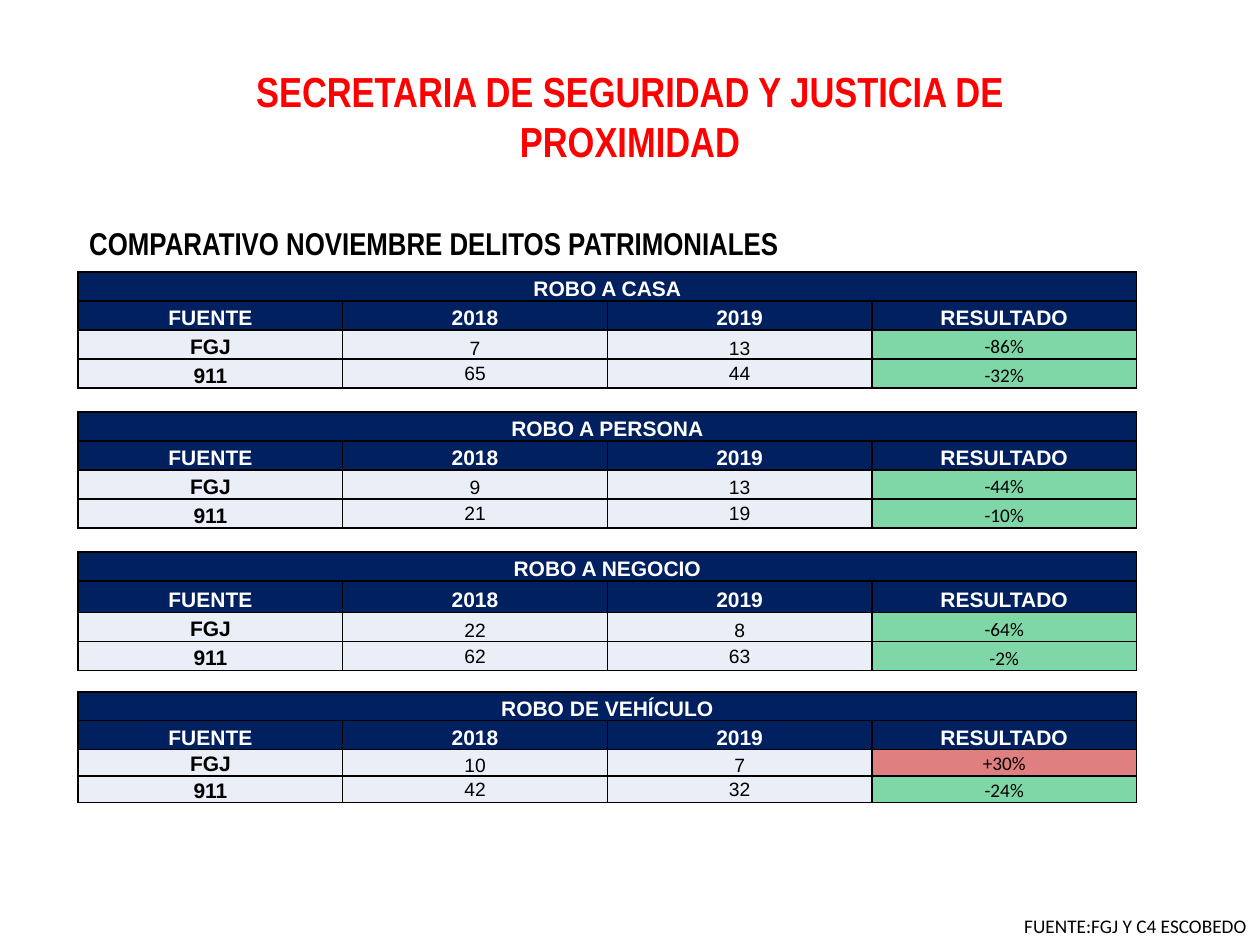
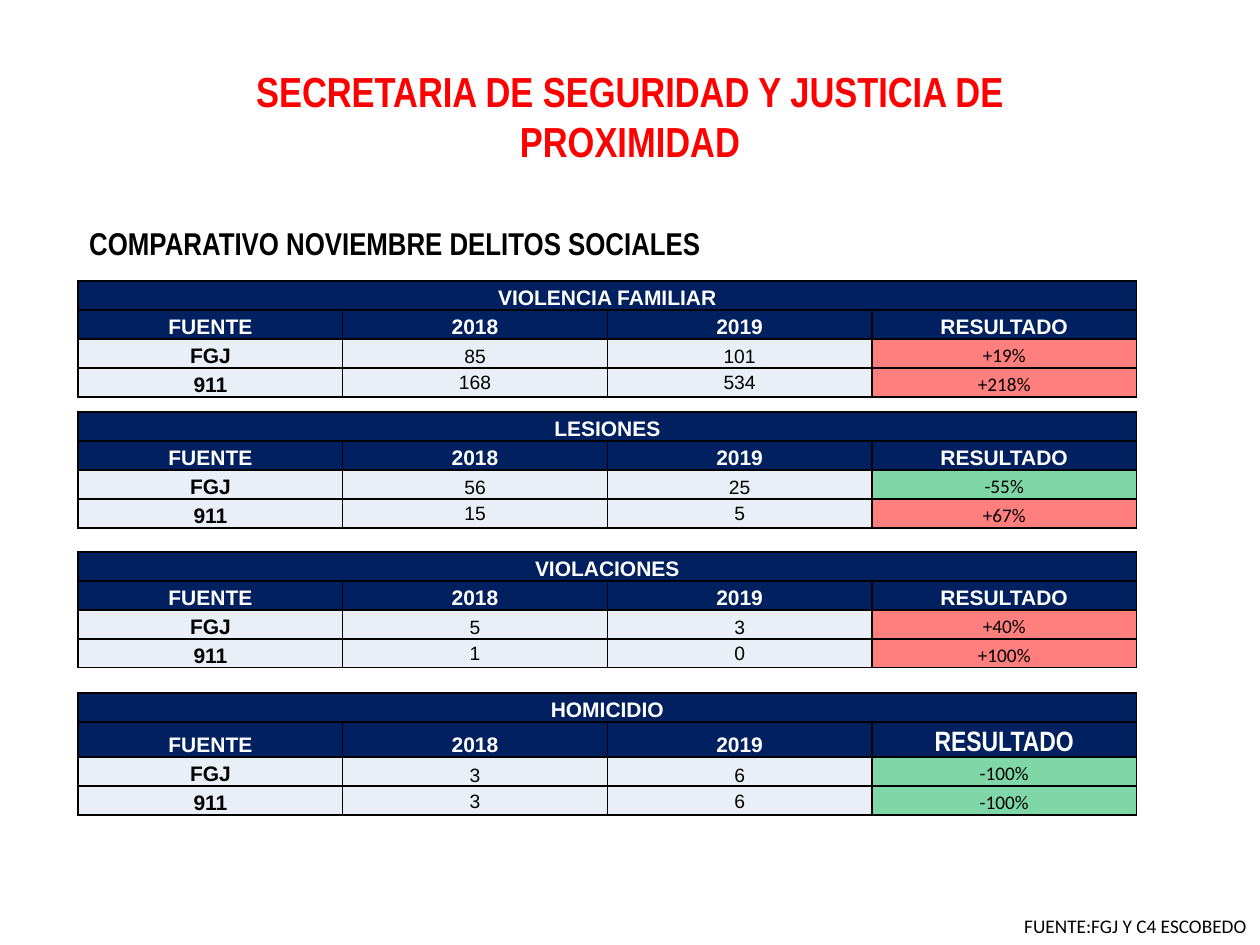
from dataclasses import dataclass

from lxml import etree
from pptx import Presentation
from pptx.dml.color import RGBColor
from pptx.enum.text import MSO_ANCHOR, MSO_AUTO_SIZE, PP_ALIGN
from pptx.oxml.ns import qn
from pptx.util import Inches, Pt

LEFT, CENTER = PP_ALIGN.LEFT, PP_ALIGN.CENTER
BOTTOM, MIDDLE = MSO_ANCHOR.BOTTOM, MSO_ANCHOR.MIDDLE
FIT_SHAPE = MSO_AUTO_SIZE.SHAPE_TO_FIT_TEXT
BLANK_LAYOUT = 6


@dataclass(frozen=True)
class Theme:
    red: str = "FF0000"
    dark_red: str = "C00000"
    green: str = "00B050"
    navy: str = "002060"
    pale: str = "EAEFF7"
    black: str = "000000"
    white: str = "FFFFFF"
    heading_font: str = "Arial Narrow"
    table_font: str = "Arial"
    result_font: str = "Calibri"
    title_size: int = 24
    subtitle_size: int = 18
    large_label_size: int = 16
    label_size: int = 12
    value_size: int = 11
    border_width: float = 1
    result_alpha: int = 50


THEME = Theme()
TITLE = "SECRETARIA DE SEGURIDAD Y JUSTICIA DE PROXIMIDAD"
SOURCE_NOTE = "FUENTE:FGJ Y C4 ESCOBEDO"
HEADINGS = ("FUENTE", "2018", "2019", "RESULTADO")
SOURCES = ("FGJ", "911")

TABLE_LEFT, FIRST_TOP, TABLE_PITCH = 0.62, 2.16, 1.11
COLUMN_WIDTH = 2.1
ROW_HEIGHTS = (0.23, 0.23, 0.23, 0.23)


@dataclass(frozen=True)
class Crime:
    name: str
    fgj: tuple
    calls_911: tuple
    row_heights: tuple = ROW_HEIGHTS
    top_shift: float = 0
    large_result_label: bool = False


PROPERTY_CRIMES = (
    Crime("ROBO A CASA", ("7", "13", "-86%"), ("65", "44", "-32%")),
    Crime("ROBO A PERSONA", ("9", "13", "-44%"), ("21", "19", "-10%")),
    Crime("ROBO A NEGOCIO", ("22", "8", "-64%"), ("62", "63", "-2%"),
          row_heights=(0.23, 0.25, 0.23, 0.23)),
    Crime("ROBO DE VEHÍCULO", ("10", "7", "+30%"), ("42", "32", "-24%"),
          row_heights=(0.23, 0.23, 0.21, 0.21)),
)
SOCIAL_CRIMES = (
    Crime("VIOLENCIA FAMILIAR", ("85", "101", "+19%"), ("168", "534", "+218%"),
          top_shift=0.07),
    Crime("LESIONES", ("56", "25", "-55%"), ("15", "5", "+67%")),
    Crime("VIOLACIONES", ("5", "3", "+40%"), ("1", "0", "+100%")),
    Crime("HOMICIDIO", ("3", "6", "-100%"), ("3", "6", "-100%"),
          row_heights=(0.23, 0.28, 0.23, 0.23), top_shift=0.01,
          large_result_label=True),
)


def write(frame, text, *, font, size, color=THEME.black, bold=False, align=LEFT):
    paragraph = frame.paragraphs[0]
    paragraph.alignment = align
    run = paragraph.add_run()
    run.text = text
    run.font.name = font
    run.font.size = Pt(size)
    run.font.bold = bold
    run.font.color.rgb = RGBColor.from_string(color)


def fill_cell(cell, color, alpha=100):
    """Fill the cell; alpha is its opacity in percent."""
    cell.fill.solid()
    cell.fill.fore_color.rgb = RGBColor.from_string(color)
    if alpha < 100:
        fill_color = cell._tc.tcPr.find(".//" + qn("a:srgbClr"))
        etree.SubElement(fill_color, qn("a:alpha"), val=str(alpha * 1000))


def border_cell(cell, color, width):
    """Line all four sides; the lines must come before the fill in the XML."""
    properties = cell._tc.get_or_add_tcPr()
    for position, side in enumerate(("lnL", "lnR", "lnT", "lnB")):
        line = etree.Element(qn("a:" + side), w=str(Pt(width)))
        solid = etree.SubElement(line, qn("a:solidFill"))
        etree.SubElement(solid, qn("a:srgbClr"), val=color)
        properties.insert(position, line)


class Deck:
    def __init__(self, theme):
        self.theme = theme
        self.presentation = Presentation()
        self.presentation.slide_width = Inches(10)
        self.presentation.slide_height = Inches(7.5)
        self.slide = None

    def text(self, box, text, *, wrap=True, **text_format):
        frame = self.slide.shapes.add_textbox(*map(Inches, box)).text_frame
        frame.word_wrap = wrap
        frame.auto_size = FIT_SHAPE
        write(frame, text, **text_format)

    def start_slide(self, subtitle):
        """Add a slide with the shared title and source note."""
        theme = self.theme
        layout = self.presentation.slide_layouts[BLANK_LAYOUT]
        self.slide = self.presentation.slides.add_slide(layout)
        self.text((1.9, 0.47, 6.2, 0.91), TITLE, font=theme.heading_font,
                  size=theme.title_size, color=theme.red, bold=True, align=CENTER)
        self.text((0.61, 1.73, 7.38, 0.4), subtitle, font=theme.heading_font,
                  size=theme.subtitle_size, bold=True)
        self.text((8.03, 7.21, 1.98, 0.29), SOURCE_NOTE, wrap=False,
                  font=theme.result_font, size=theme.value_size)

    def cell(self, cell, text, fill, *, alpha=100, anchor=BOTTOM, **text_format):
        cell.margin_left = cell.margin_right = cell.margin_top = Inches(0.01)
        cell.margin_bottom = 0
        cell.vertical_anchor = anchor
        fill_cell(cell, fill, alpha)
        border_cell(cell, self.theme.black, self.theme.border_width)
        write(cell.text_frame, text, align=CENTER, **text_format)

    def crime_table(self, crime, top, increase_color):
        theme = self.theme
        width = COLUMN_WIDTH * len(HEADINGS)
        table = self.slide.shapes.add_table(
            len(crime.row_heights), len(HEADINGS), Inches(TABLE_LEFT), Inches(top),
            Inches(width), Inches(sum(crime.row_heights))).table
        table.first_row = table.horz_banding = False
        for column in table.columns:
            column.width = Inches(COLUMN_WIDTH)
        for row, height in zip(table.rows, crime.row_heights):
            row.height = Inches(height)

        label = dict(font=theme.table_font, size=theme.label_size, bold=True)
        header = dict(label, color=theme.white)
        for cell in table.rows[0].cells:
            border_cell(cell, theme.black, theme.border_width)
        name_cell = table.cell(0, 0)
        name_cell.merge(table.cell(0, len(HEADINGS) - 1))
        for line in list(name_cell._tc.tcPr):
            name_cell._tc.tcPr.remove(line)
        self.cell(name_cell, crime.name, theme.navy, **header)

        for column, heading in enumerate(HEADINGS):
            style = header
            if crime.large_result_label and heading == "RESULTADO":
                style = dict(header, font=theme.heading_font,
                             size=theme.large_label_size)
            self.cell(table.cell(1, column), heading, theme.navy, **style)

        counts = zip(SOURCES, (crime.fgj, crime.calls_911), (BOTTOM, MIDDLE))
        for row, (source, (before, after, result), anchor) in enumerate(counts, 2):
            self.cell(table.cell(row, 0), source, theme.pale, **label)
            for column, count in enumerate((before, after), 1):
                self.cell(table.cell(row, column), count, theme.pale, anchor=anchor,
                          font=theme.table_font, size=theme.value_size)
            result_color = increase_color if result.startswith("+") else theme.green
            self.cell(table.cell(row, 3), result, result_color,
                      alpha=theme.result_alpha, font=theme.result_font,
                      size=theme.value_size)

    def comparison(self, subtitle, crimes, increase_color):
        self.start_slide(subtitle)
        for index, crime in enumerate(crimes):
            top = FIRST_TOP + TABLE_PITCH * index + crime.top_shift
            self.crime_table(crime, top, increase_color)


def main():
    deck = Deck(THEME)
    deck.comparison("COMPARATIVO NOVIEMBRE DELITOS PATRIMONIALES",
                    PROPERTY_CRIMES, THEME.dark_red)
    deck.comparison("COMPARATIVO NOVIEMBRE DELITOS SOCIALES",
                    SOCIAL_CRIMES, THEME.red)
    deck.presentation.save("out.pptx")


if __name__ == "__main__":
    main()
